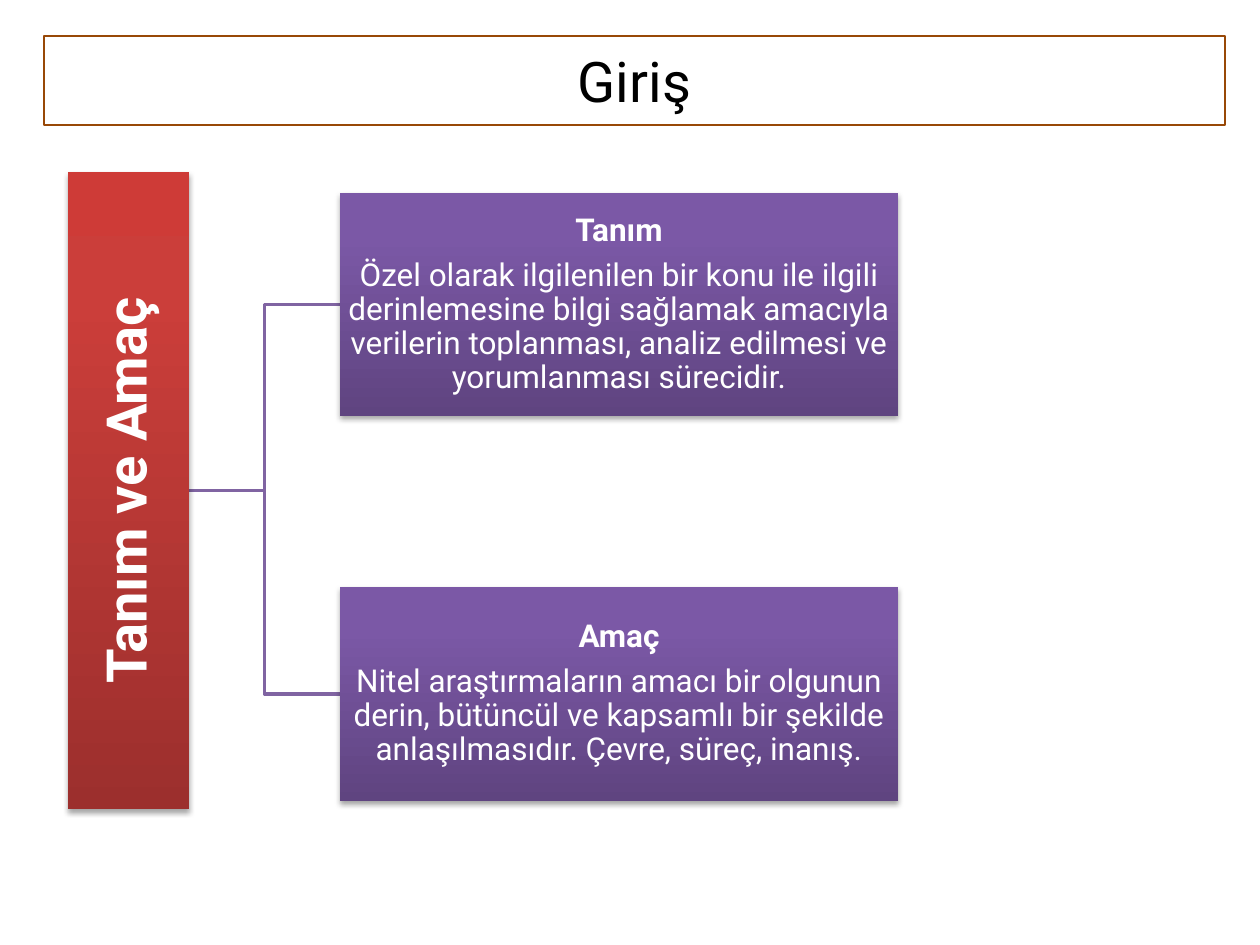
import pptx
import pptx.util
import pptx.oxml
import pptx.oxml.ns
import pptx.dml.color
import pptx.enum.shapes
import pptx.enum.text

EMU_PER_PX = 914400 / 126
FONT = "Roboto"
RED = [(0, "9C2F2D"), (80, "CB3E3A"), (100, "CE3B37")]
PURPLE = [(0, "5F4480"), (80, "7B58A6"), (100, "7C57A8")]
BRANCHES = [
    (193, 223, "Tanım",
     "Özel olarak ilgilenilen bir konu ile ilgili derinlemesine bilgi sağlamak "
     "amacıyla verilerin toplanması, analiz edilmesi ve yorumlanması sürecidir."),
    (587, 214, "Amaç",
     "Nitel araştırmaların amacı bir olgunun derin, bütüncül ve kapsamlı bir "
     "şekilde anlaşılmasıdır. Çevre, süreç, inanış."),
]


def px(length):
    return pptx.util.Emu(round(length * EMU_PER_PX))


def colour(value):
    return pptx.dml.color.RGBColor.from_string(value)


def apply_format(target, values):
    for name, value in values.items():
        setattr(target, name, value)


def add_box(slide, box):
    kind = pptx.enum.shapes.MSO_SHAPE.RECTANGLE
    shape = slide.shapes.add_shape(kind, *map(px, box))
    shape.shadow.inherit = False
    shape.fill.background()
    shape.line.fill.background()
    return shape


def shade(shape, stops):
    namespace = pptx.oxml.ns.nsdecls("a")
    stop_list = "".join(
        f'<a:gs pos="{position * 1000}"><a:srgbClr val="{value}"/></a:gs>'
        for position, value in stops)
    gradient = pptx.oxml.parse_xml(
        f'<a:gradFill {namespace} rotWithShape="0"><a:gsLst>{stop_list}</a:gsLst>'
        '<a:lin ang="16200000" scaled="0"/></a:gradFill>')
    shadow = pptx.oxml.parse_xml(
        f'<a:outerShdw {namespace} blurRad="40000" dist="23000" dir="5400000" '
        'rotWithShape="0"><a:srgbClr val="000000"><a:alpha val="35000"/>'
        '</a:srgbClr></a:outerShdw>')
    properties = shape.element.spPr
    empty_fill = properties.find(pptx.oxml.ns.qn("a:noFill"))
    properties.replace(empty_fill, gradient)
    properties.find(pptx.oxml.ns.qn("a:effectLst")).append(shadow)


def write(shape, lines, size, ink, inset, paragraph_format):
    frame = shape.text_frame
    margins = ("margin_left", "margin_top", "margin_right", "margin_bottom")
    apply_format(frame, {
        "word_wrap": True,
        "vertical_anchor": pptx.enum.text.MSO_ANCHOR.MIDDLE,
        **dict.fromkeys(margins, px(inset)),
    })
    for index, (text, bold) in enumerate(lines):
        paragraph = frame.add_paragraph() if index else frame.paragraphs[0]
        apply_format(paragraph, {
            "alignment": pptx.enum.text.PP_ALIGN.CENTER, **paragraph_format})
        run = paragraph.add_run()
        run.text = text
        apply_format(run.font, {
            "name": FONT, "size": pptx.util.Pt(size), "bold": bold})
        run.font.color.rgb = colour(ink)


def add_title(slide, box, text):
    shape = add_box(slide, box)
    shape.line.color.rgb = colour("984807")
    shape.line.width = pptx.util.Pt(0.75)
    write(shape, [(text, False)], 32, "000000", 6, {})


def add_node(slide, box, stops, lines, size, inset, rotation=0):
    shape = add_box(slide, box)
    shape.rotation = rotation
    shade(shape, stops)
    write(shape, lines, size, "FFFFFF", inset, {
        "line_spacing": 0.9, "space_after": pptx.util.Pt(size * 0.35)})


def add_link(slide, start, end):
    kind = pptx.enum.shapes.MSO_CONNECTOR.ELBOW
    connector = slide.shapes.add_connector(kind, *map(px, start + end))
    connector.line.color.rgb = colour("8064A2")
    connector.line.width = pptx.util.Pt(2)
    connector.element.spPr.append(pptx.oxml.parse_xml(
        f'<a:effectLst {pptx.oxml.ns.nsdecls("a")}/>'))


def add_hierarchy(slide, box):
    left, top, width, height = box
    root_width, branch_width = 121, 558
    branch_left = left + width - branch_width
    root_right = left + root_width
    middle = top + height / 2

    for branch_top, branch_height, heading, body in BRANCHES:
        add_link(slide, (root_right, middle),
                 (branch_left, branch_top + branch_height / 2))

    rotated_box = (left + (root_width - height) / 2,
                   middle - root_width / 2, height, root_width)
    add_node(slide, rotated_box, RED, [("Tanım ve Amaç", True)], 32, 3, 270)

    for branch_top, branch_height, heading, body in BRANCHES:
        add_node(slide, (branch_left, branch_top, branch_width, branch_height),
                 PURPLE, [(heading, True), (body, False)], 18, 1)


def main():
    presentation = pptx.Presentation()
    apply_format(presentation, {"slide_width": px(1260), "slide_height": px(945)})
    slide = presentation.slides.add_slide(presentation.slide_layouts[6])
    add_title(slide, (44, 36, 1181, 89), "Giriş")
    add_hierarchy(slide, (68, 172, 830, 637))
    presentation.save("out.pptx")


if __name__ == "__main__":
    main()
